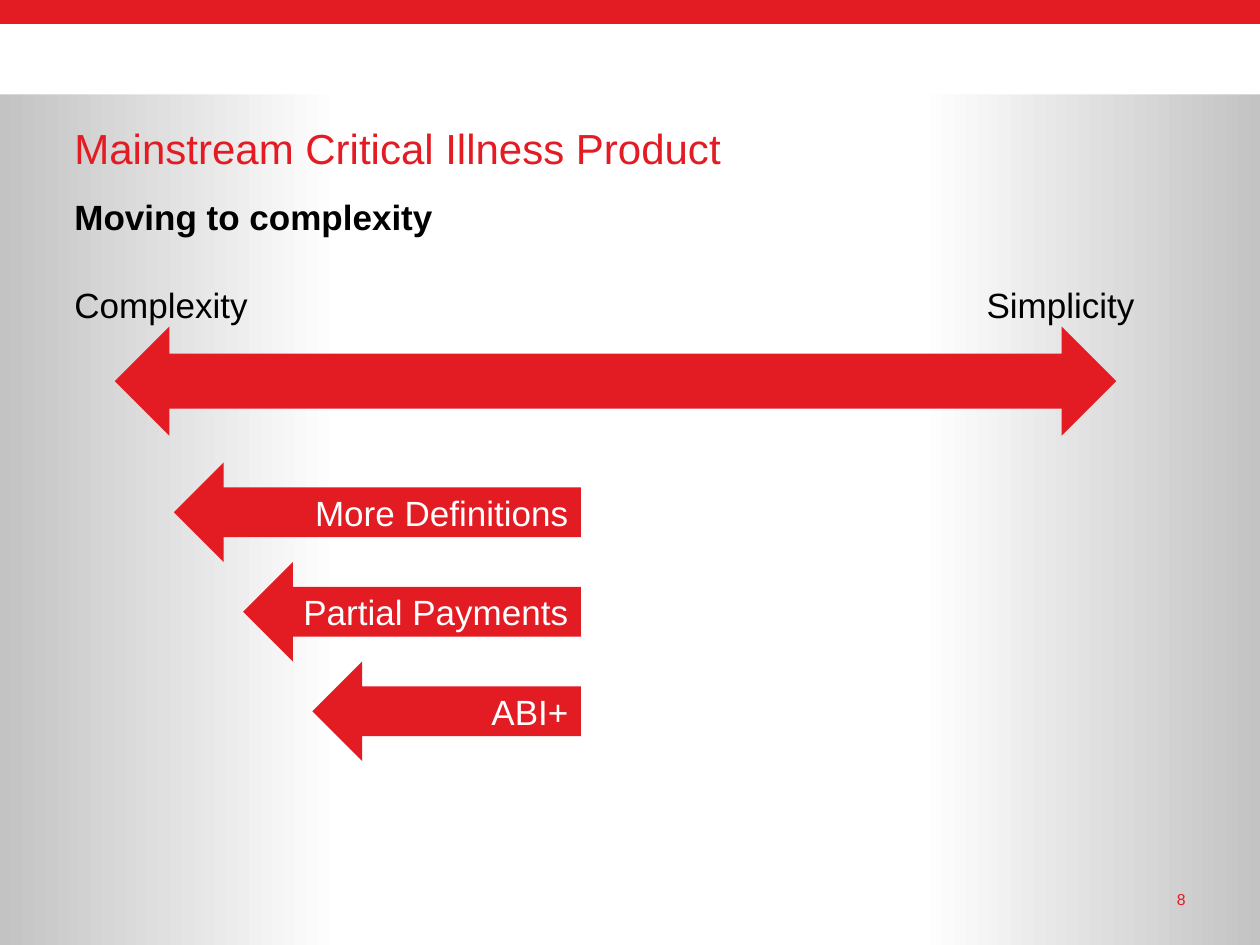
import pptx
import pptx.dml.color
import pptx.enum.shapes
import pptx.enum.text
import pptx.oxml.ns
import pptx.util
from lxml import etree

Inches = pptx.util.Inches
RGBColor = pptx.dml.color.RGBColor
SHAPE = pptx.enum.shapes.MSO_SHAPE
ALIGN = pptx.enum.text.PP_ALIGN
ANCHOR = pptx.enum.text.MSO_ANCHOR
qn = pptx.oxml.ns.qn

RED = RGBColor(0xE3, 0x1B, 0x23)
WHITE = RGBColor(0xFF, 0xFF, 0xFF)
BLACK = RGBColor(0, 0, 0)
GREY = RGBColor(0xC3, 0xC3, 0xC3)

# Content
BACKGROUND_STOPS = [(0, GREY), (27, WHITE), (73, WHITE), (100, GREY)]
BANDS = [(0.75, WHITE), (0.19, RED)]  # height, colour
# text, (left, top, width, height), size, colour, bold, alignment, top inset
TEXTS = [
    ("Mainstream Critical Illness Product", (0.59, 0.92, 8.82, 0.55), 24, RED, False, ALIGN.LEFT, 0.05),
    ("Moving to complexity", (0.59, 1.55, 8.82, 0.47), 20, BLACK, True, ALIGN.LEFT, 0),
    ("Complexity", (0.59, 2.25, 1.57, 0.34), 20, BLACK, False, ALIGN.LEFT, 0),
    ("Simplicity", (7.83, 2.25, 1.34, 0.34), 20, BLACK, False, ALIGN.LEFT, 0),
    ("8", (8.86, 7.06, 0.55, 0.24), 9, RED, False, ALIGN.RIGHT, 0),
]
SCALE_ARROW = (0.91, 2.59, 7.95, 0.87)
STEPS = ["More Definitions", "Partial Payments", "ABI+"]
STEP_LEFT, STEP_TOP, STEP_RIGHT = 1.38, 3.67, 4.61
STEP_INDENT, STEP_HEIGHT = 0.55, 0.79


def add_shape(slide, kind, box, colour):
    shape = slide.shapes.add_shape(kind, *map(Inches, box))
    shape.shadow.inherit = False
    shape.fill.solid()
    shape.fill.fore_color.rgb = colour
    shape.line.fill.background()
    return shape


def write(text_frame, text, size, colour, bold, alignment):
    paragraph = text_frame.paragraphs[0]
    paragraph.text = text
    paragraph.alignment = alignment
    font = paragraph.font
    font.name = "Arial"
    font.size = pptx.util.Pt(size)
    font.bold = bold
    font.color.rgb = colour


def add_text(slide, text, box, size, colour, bold, alignment, top_inset):
    text_frame = slide.shapes.add_textbox(*map(Inches, box)).text_frame
    text_frame.word_wrap = True
    text_frame.margin_left = text_frame.margin_right = text_frame.margin_bottom = 0
    text_frame.margin_top = Inches(top_inset)
    write(text_frame, text, size, colour, bold, alignment)


def set_background(slide):
    fill = slide.background.fill
    fill.gradient()
    fill.gradient_angle = 0
    stop_list = next(slide.element.iter(qn("a:gsLst")))
    for stop in list(stop_list):
        stop_list.remove(stop)
    for percent, colour in BACKGROUND_STOPS:
        stop = etree.SubElement(stop_list, qn("a:gs"), pos=str(percent * 1000))
        etree.SubElement(stop, qn("a:srgbClr"), val=str(colour))


def main():
    presentation = pptx.Presentation()
    presentation.slide_width = Inches(10)
    presentation.slide_height = Inches(7.5)
    slide = presentation.slides.add_slide(presentation.slide_layouts[6])
    set_background(slide)

    # Header bands
    for height, colour in BANDS:
        add_shape(slide, SHAPE.RECTANGLE, (0, 0, 10, height), colour)

    # Scale from complexity to simplicity
    add_shape(slide, SHAPE.LEFT_RIGHT_ARROW, SCALE_ARROW, RED)

    # Headings, scale labels and page number
    for text in TEXTS:
        add_text(slide, *text)

    # Steps towards complexity, flush on the right
    for index, label in enumerate(STEPS):
        left = STEP_LEFT + index * STEP_INDENT
        top = STEP_TOP + index * STEP_HEIGHT
        arrow = add_shape(slide, SHAPE.LEFT_ARROW, (left, top, STEP_RIGHT - left, STEP_HEIGHT), RED)
        arrow.text_frame.word_wrap = False
        arrow.text_frame.vertical_anchor = ANCHOR.MIDDLE
        write(arrow.text_frame, label, 20, WHITE, False, ALIGN.RIGHT)

    presentation.save("out.pptx")


if __name__ == "__main__":
    main()
